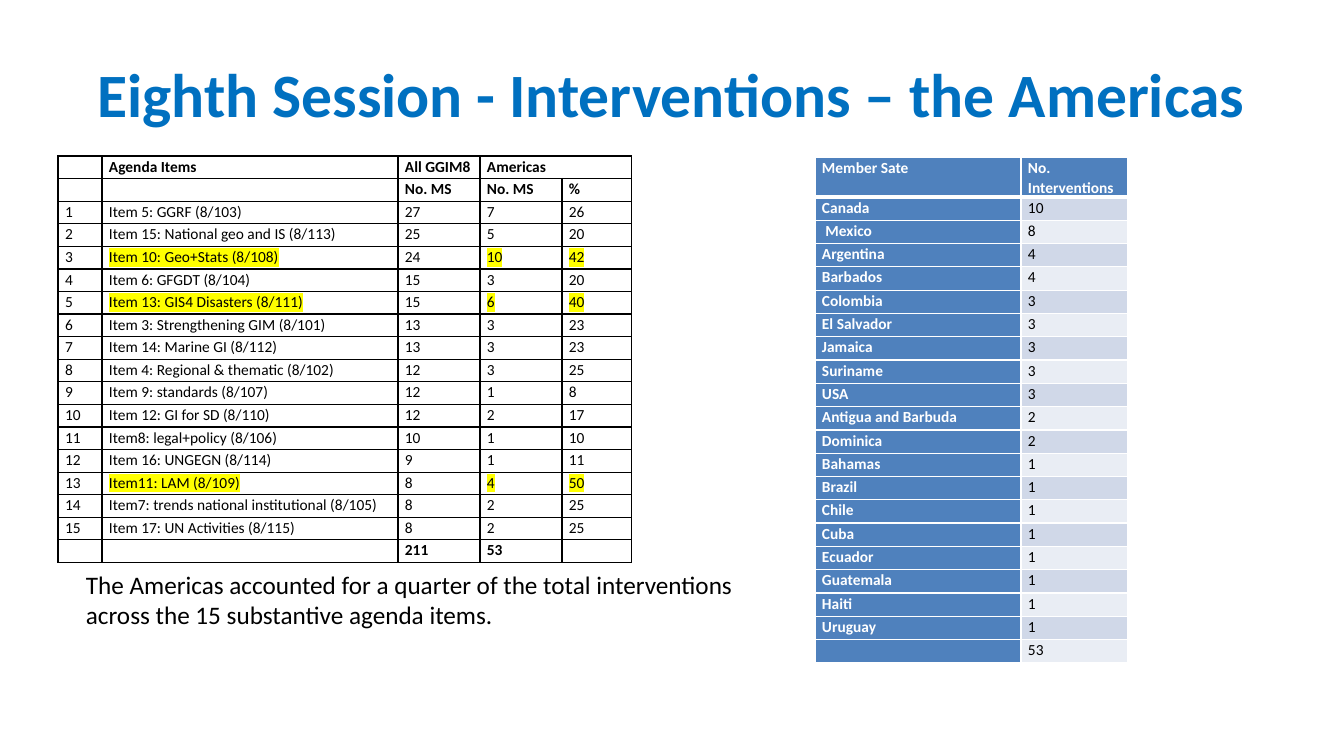
from dataclasses import dataclass

from lxml import etree
from pptx import Presentation
from pptx.dml.color import RGBColor
from pptx.enum.text import MSO_ANCHOR, PP_ALIGN
from pptx.oxml.ns import qn
from pptx.util import Pt

CENTER, LEFT = PP_ALIGN.CENTER, PP_ALIGN.LEFT
MIDDLE, TOP = MSO_ANCHOR.MIDDLE, MSO_ANCHOR.TOP
EMU_PER_PX = 12192000 / 1344


@dataclass(frozen=True)
class Theme:
    """Colours, font and type sizes of the slide."""
    font: str = "Calibri"
    title: str = "0070C0"
    ink: str = "000000"
    white: str = "FFFFFF"
    header: str = "4F81BD"
    bands: tuple = ("E9EDF4", "D0D8E8")
    marker: str = "FFFF00"
    title_size: int = 44
    caption_size: int = 18
    cell_size: int = 11


THEME = Theme()


def px(length):
    """Turn pixels into EMU."""
    return round(length * EMU_PER_PX)


def add_color(parent, tag, color):
    """Append a colour element to an XML parent."""
    element = etree.SubElement(parent, qn(tag))
    etree.SubElement(element, qn("a:srgbClr"), val=color)


def write_text(frame, text, *, size, color=THEME.ink, bold=False,
               align=LEFT, spacing=1.0, highlight=None):
    """Write one formatted paragraph into a text frame."""
    paragraph = frame.paragraphs[0]
    paragraph.alignment = align
    paragraph.line_spacing = spacing
    if not text:
        etree.SubElement(paragraph._p, qn("a:endParaRPr"), sz=str(size * 100))
        return
    run = paragraph.add_run()
    run.text = text
    run.font.size, run.font.bold = Pt(size), bold
    run.font.color.rgb = RGBColor.from_string(color)
    if highlight:
        add_color(run.font._element, "a:highlight", highlight)
    run.font.name = THEME.font


class SlideBuilder:
    """Holds the theme and the current slide."""

    def __init__(self, presentation, theme):
        self.theme = theme
        self.slide = presentation.slides.add_slide(presentation.slide_layouts[6])

    def text(self, text, box, anchor=TOP, **style):
        """Add a wrapping text box."""
        shape = self.slide.shapes.add_textbox(*map(px, box))
        frame = shape.text_frame
        frame.word_wrap = True
        frame.vertical_anchor = anchor
        write_text(frame, text, **style)

    def table(self, rows, box, columns, style, header_height=None):
        """Add a table whose remaining height is shared evenly by the rows."""
        shape = self.slide.shapes.add_table(len(rows), len(columns), *map(px, box))
        table = shape.table
        table.first_row = table.horz_banding = False
        for column, width in zip(table.columns, columns):
            column.width = px(width)
        even_height = box[3] / len(rows)
        if header_height:
            even_height = (box[3] - header_height) / (len(rows) - 1)
        for number, (row, values) in enumerate(zip(table.rows, rows)):
            row.height = px(header_height if header_height and number == 0 else even_height)
            for index, value in enumerate(values):
                self.cell(table.cell(number, index), value, **style(number, index))
        return table

    def cell(self, cell, text, border, fill=None, bottom=1, **style):
        """Fill in one table cell."""
        cell.margin_left = cell.margin_right = px(7)
        cell.margin_top = cell.margin_bottom = 0
        write_text(cell.text_frame, text, size=self.theme.cell_size, spacing=1.07, **style)
        properties = cell._tc.get_or_add_tcPr()
        for side, width in zip("LRTB", (1, 1, 1, bottom)):
            line = etree.SubElement(properties, qn(f"a:ln{side}"), w=str(Pt(width)))
            add_color(line, "a:solidFill", border)
        if fill:
            cell.fill.solid()
            cell.fill.fore_color.rgb = RGBColor.from_string(fill)
        else:
            cell.fill.background()


AGENDA = [
    ("Item 5: GGRF (8/103)", 27, 7, 26),
    ("Item 15: National geo and IS (8/113)", 25, 5, 20),
    ("Item 10: Geo+Stats (8/108)", 24, 10, 42),
    ("Item 6: GFGDT (8/104)", 15, 3, 20),
    ("Item 13: GIS4 Disasters (8/111)", 15, 6, 40),
    ("Item 3: Strengthening GIM (8/101)", 13, 3, 23),
    ("Item 14: Marine GI (8/112)", 13, 3, 23),
    ("Item 4: Regional & thematic (8/102)", 12, 3, 25),
    ("Item 9: standards (8/107)", 12, 1, 8),
    ("Item 12: GI for SD (8/110)", 12, 2, 17),
    ("Item8: legal+policy (8/106)", 10, 1, 10),
    ("Item 16: UNGEGN (8/114)", 9, 1, 11),
    ("Item11: LAM (8/109)", 8, 4, 50),
    ("Item7: trends national institutional (8/105)", 8, 2, 25),
    ("Item 17: UN Activities (8/115)", 8, 2, 25),
]
HIGHLIGHTED_ITEMS = (3, 5, 13)
MEMBER_STATES = [
    ("Canada", 10), (" Mexico", 8), ("Argentina", 4), ("Barbados", 4),
    ("Colombia", 3), ("El Salvador", 3), ("Jamaica", 3), ("Suriname", 3),
    ("USA", 3), ("Antigua and Barbuda", 2), ("Dominica", 2), ("Bahamas", 1),
    ("Brazil", 1), ("Chile", 1), ("Cuba", 1), ("Ecuador", 1),
    ("Guatemala", 1), ("Haiti", 1), ("Uruguay", 1), ("", 53),
]


def agenda_style(row, column):
    """Give the format of a cell in the agenda table."""
    marked = row - 1 in HIGHLIGHTED_ITEMS and column in (1, 3, 4)
    return {"border": THEME.ink, "bold": row < 2 or row > len(AGENDA) + 1,
            "highlight": THEME.marker if marked else None}


def member_style(row, column):
    """Give the format of a cell in the member state table."""
    heading = row == 0 or column == 0
    return {"border": THEME.white, "bottom": 3 if row == 0 else 1, "bold": heading,
            "color": THEME.white if heading else THEME.ink,
            "fill": THEME.header if heading else THEME.bands[row % 2]}


def main():
    """Build the slide and save it."""
    presentation = Presentation()
    presentation.slide_width, presentation.slide_height = px(1344), px(756)
    builder = SlideBuilder(presentation, THEME)
    builder.text("Eighth Session - Interventions – the Americas", (67, 30, 1210, 126),
                 anchor=MIDDLE, size=THEME.title_size, color=THEME.title,
                 bold=True, align=CENTER)

    agenda_rows = [("", "Agenda Items", "All GGIM8", "Americas", ""),
                   ("", "", "No. MS", "No. MS", "%")]
    agenda_rows += [(str(number), *map(str, item)) for number, item in enumerate(AGENDA, 1)]
    agenda_rows.append(("", "", "211", "53", ""))
    agenda = builder.table(agenda_rows, (58, 156, 574, 407), (44, 296, 82, 82, 70),
                           agenda_style)
    agenda.cell(0, 3).merge(agenda.cell(0, 4))

    member_rows = [("Member Sate", "No. Interventions")]
    member_rows += [(state, str(count)) for state, count in MEMBER_STATES]
    builder.table(member_rows, (815, 157, 313, 506), (206, 107), member_style,
                  header_height=40)

    builder.text("The Americas accounted for a quarter of the total interventions "
                 "across the 15 substantive agenda items.", (76, 564, 672, 72),
                 size=THEME.caption_size)
    presentation.save("out.pptx")


if __name__ == "__main__":
    main()
